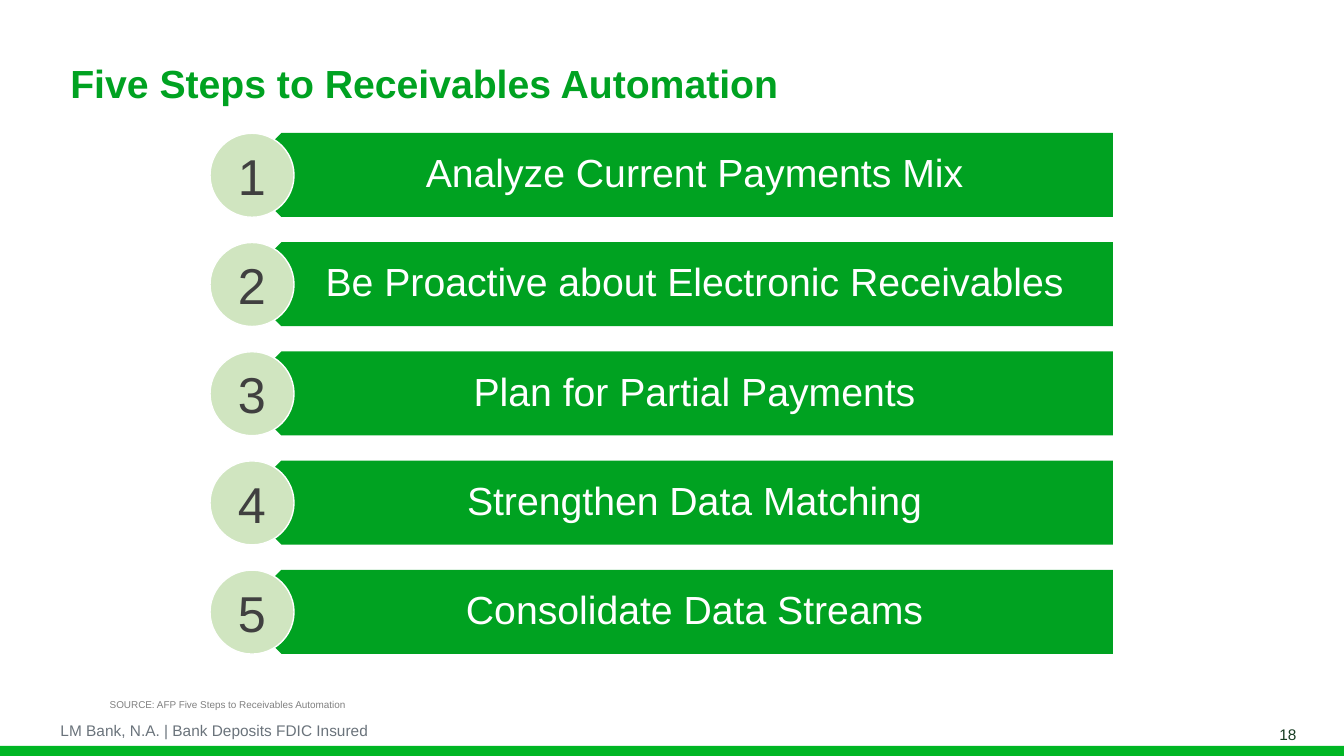
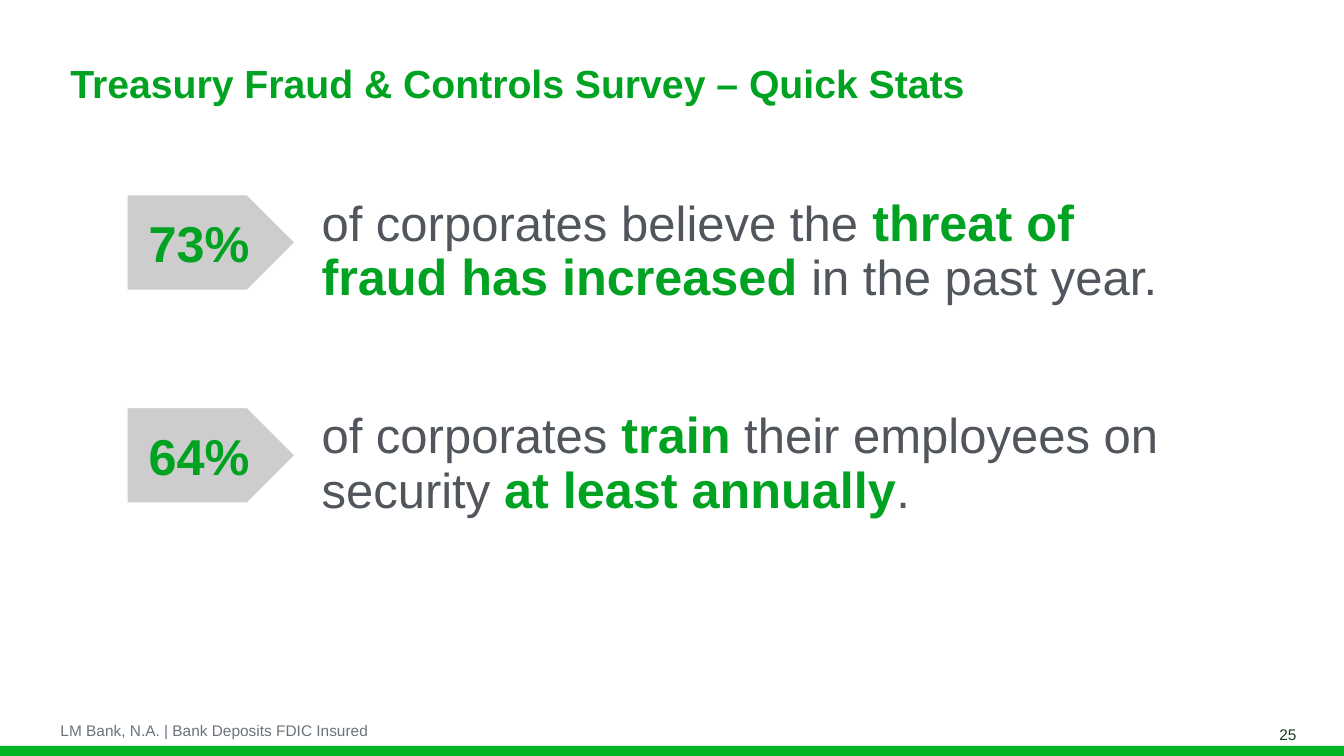
"""Build two treasury slides: receivables automation steps and fraud survey stats."""
from dataclasses import dataclass

from pptx import Presentation
from pptx import util as u
from pptx.dml.color import RGBColor
from pptx.enum import shapes, text


@dataclass(frozen=True)
class Theme:
    font: str = "Arial"
    green: str = "00A221"
    band: str = "00B624"
    pale_green: str = "D0E5C0"
    arrow_gray: str = "CDCDCD"
    white: str = "FFFFFF"
    number_gray: str = "404040"
    body_gray: str = "50565C"
    footer_gray: str = "6A737B"
    source_gray: str = "808080"
    page_green: str = "163D22"
    heading_size: float = 28
    figure_size: float = 36
    body_size: float = 35
    footer_size: float = 11
    source_size: float = 7.1


THEME = Theme()
WIDTH, HEIGHT = 960, 540
BAND_HEIGHT = 7.2
FOOTER = "LM Bank, N.A. | Bank Deposits FDIC Insured"

STEPS = [
    "Analyze Current Payments Mix",
    "Be Proactive about Electronic Receivables",
    "Plan for Partial Payments",
    "Strengthen Data Matching",
    "Consolidate Data Streams",
]
STEP_TOP, STEP_PITCH, STEP_HEIGHT = 95.2, 78, 60
CIRCLE_LEFT, BANNER_LEFT, BANNER_RIGHT = 150, 170.6, 794.8

STATS = [
    ("73%", [("of corporates believe the ", False),
             ("threat of fraud has increased", True),
             (" in the past year.", False)]),
    ("64%", [("of corporates ", False),
             ("train", True),
             (" their employees on security ", False),
             ("at least annually", True),
             (".", False)]),
]
STAT_TOP, STAT_PITCH = 139, 152


def write(paragraph, words, size, color, bold=False):
    run = paragraph.add_run()
    run.text = words
    run.font.name = THEME.font
    run.font.size = u.Pt(size)
    run.font.bold = bold
    run.font.color.rgb = RGBColor.from_string(color)


class Deck:
    def __init__(self):
        self.show = Presentation()
        self.show.slide_width, self.show.slide_height = u.Pt(WIDTH), u.Pt(HEIGHT)
        self.slide = None

    def start(self, title, page):
        self.slide = self.show.slides.add_slide(self.show.slide_layouts[6])
        self.shape(shapes.MSO_SHAPE.RECTANGLE, 0, HEIGHT - BAND_HEIGHT, WIDTH,
                   BAND_HEIGHT, THEME.band)
        heading = self.box(43.2, 30.2, 792, 63.4, anchor=text.MSO_ANCHOR.MIDDLE,
                           insets=(7.2, 3.6, 7.2, 3.6), spacing=0.85)
        write(heading, title, size=THEME.heading_size, color=THEME.green, bold=True)
        number = self.box(860.4, 517.7, 72.7, 14.4, anchor=text.MSO_ANCHOR.MIDDLE,
                          insets=(7.2, 0, 7.2, 0), align=text.PP_ALIGN.RIGHT)
        write(number, str(page), size=THEME.footer_size, color=THEME.page_green)
        footer = self.box(43.2, 514.8, 540, 13.7)
        write(footer, FOOTER, size=THEME.footer_size, color=THEME.footer_gray)

    def frame(self, holder, anchor=text.MSO_ANCHOR.TOP, insets=(0, 0, 0, 0),
              align=text.PP_ALIGN.LEFT, spacing=1.0):
        frame = holder.text_frame
        frame.word_wrap = True
        frame.vertical_anchor = anchor
        (frame.margin_left, frame.margin_top,
         frame.margin_right, frame.margin_bottom) = map(u.Pt, insets)
        paragraph = frame.paragraphs[0]
        paragraph.alignment = align
        paragraph.line_spacing = spacing
        return paragraph

    def box(self, left, top, width, height, **layout):
        holder = self.slide.shapes.add_textbox(*map(u.Pt, (left, top, width, height)))
        return self.frame(holder, **layout)

    def paint(self, shape, fill, line=None):
        shape.shadow.inherit = False
        shape.fill.solid()
        shape.fill.fore_color.rgb = RGBColor.from_string(fill)
        if line:
            shape.line.color.rgb = RGBColor.from_string(line)
            shape.line.width = u.Pt(1)
        else:
            shape.line.fill.background()

    def shape(self, preset, left, top, width, height, fill, line=None):
        shape = self.slide.shapes.add_shape(
            preset, *map(u.Pt, (left, top, width, height)))
        self.paint(shape, fill, line)
        return shape

    def step(self, number, label, top):
        bottom, middle = top + STEP_HEIGHT, top + STEP_HEIGHT / 2
        shoulder = BANNER_LEFT + STEP_HEIGHT / 2
        outline = self.slide.shapes.build_freeform(
            BANNER_RIGHT, bottom, scale=u.Pt(1))
        outline.add_line_segments([(shoulder, bottom), (BANNER_LEFT, middle),
                                   (shoulder, top), (BANNER_RIGHT, top)])
        banner = outline.convert_to_shape()
        self.paint(banner, THEME.green)
        centered = {"anchor": text.MSO_ANCHOR.MIDDLE, "align": text.PP_ALIGN.CENTER}
        write(self.frame(banner, insets=(41.8, 8.6, 15.8, 8.6), spacing=0.9, **centered),
              label, size=THEME.heading_size, color=THEME.white)
        circle = self.shape(shapes.MSO_SHAPE.OVAL, CIRCLE_LEFT, top, STEP_HEIGHT,
                            STEP_HEIGHT, THEME.pale_green, THEME.white)
        write(self.frame(circle, **centered), str(number),
              size=THEME.figure_size, color=THEME.number_gray)

    def stat(self, figure, phrases, top):
        arrow = self.shape(shapes.MSO_SHAPE.PENTAGON, 90.7, top, 120.2, 68.4,
                           THEME.arrow_gray, THEME.white)
        write(self.frame(arrow, anchor=text.MSO_ANCHOR.MIDDLE,
                         align=text.PP_ALIGN.CENTER),
              figure, size=THEME.figure_size, color=THEME.green, bold=True)
        finding = self.box(229.7, top + 2.1, 602.6, 76, spacing=0.9)
        for phrase, stressed in phrases:
            write(finding, phrase, bold=stressed,
                  size=THEME.figure_size if stressed else THEME.body_size,
                  color=THEME.green if stressed else THEME.body_gray)

    def source(self, words):
        write(self.box(71.3, 495.4, 636.5, 15.8, insets=(7.2, 3.6, 7.2, 3.6)),
              words, size=THEME.source_size, color=THEME.source_gray)


def main():
    deck = Deck()
    deck.start("Five Steps to Receivables Automation", 18)
    for index, label in enumerate(STEPS):
        deck.step(index + 1, label, STEP_TOP + index * STEP_PITCH)
    deck.source("SOURCE: AFP Five Steps to Receivables Automation")

    deck.start("Treasury Fraud & Controls Survey – Quick Stats", 25)
    for index, (figure, phrases) in enumerate(STATS):
        deck.stat(figure, phrases, STAT_TOP + index * STAT_PITCH)

    deck.show.save("out.pptx")


if __name__ == "__main__":
    main()
